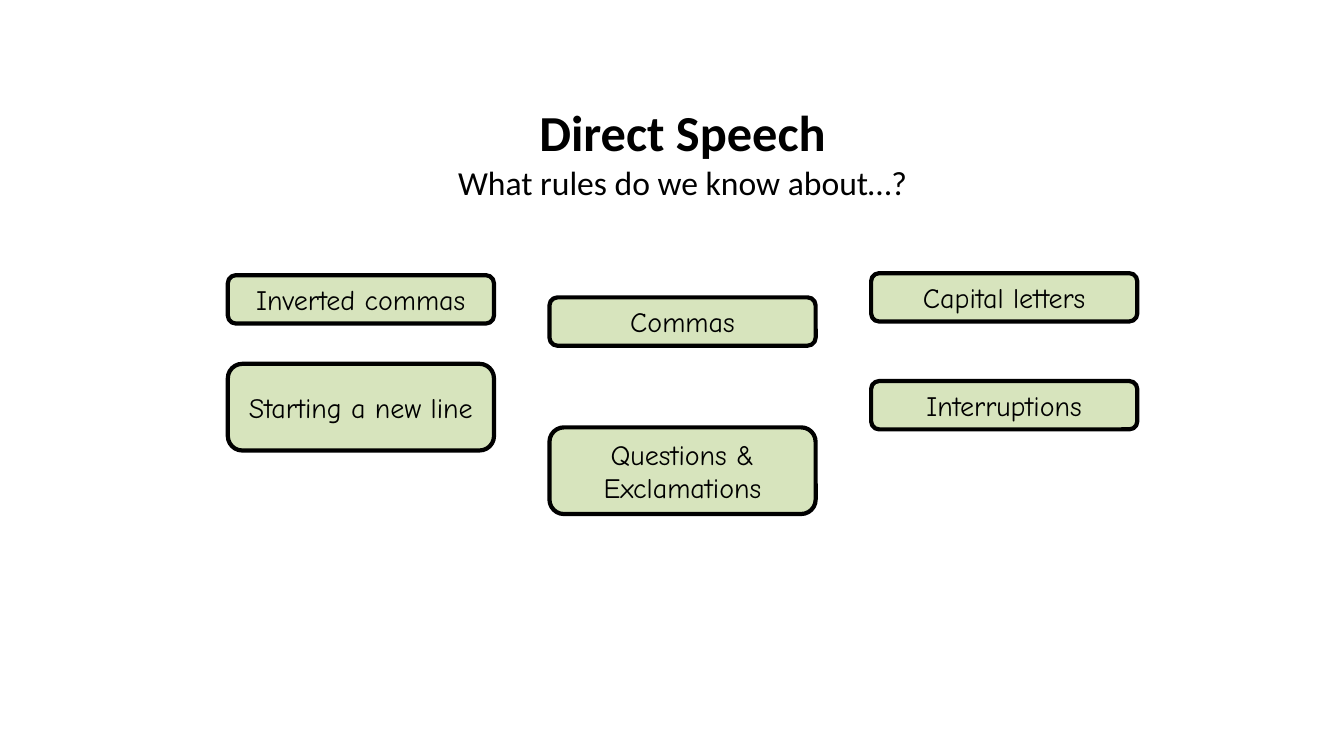
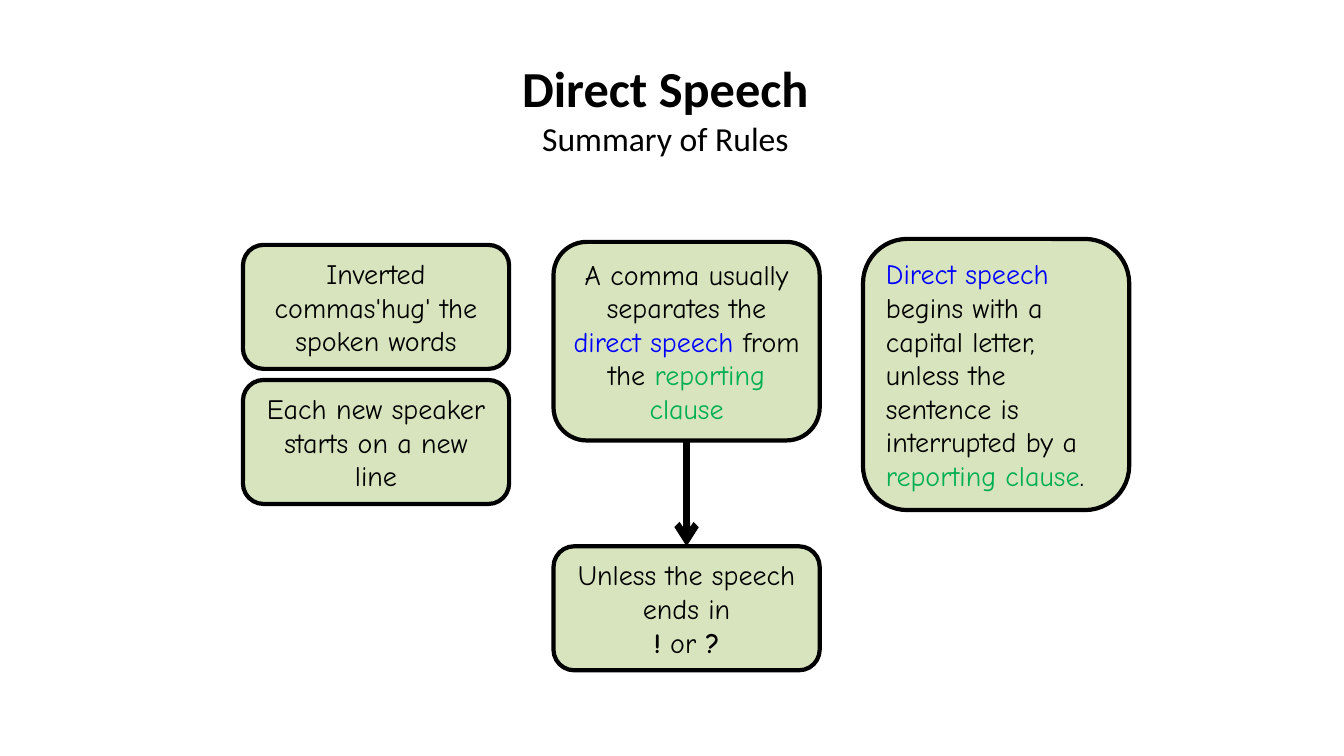
"""Build two slides on the rules of direct speech."""
from dataclasses import dataclass

from lxml import etree
from pptx import Presentation
from pptx import util as u
from pptx.dml.color import RGBColor
from pptx.enum import shapes, text
from pptx.oxml import ns

PX = 9144
BLACK, GREEN_FILL = "000000", "D7E4BD"
SPEECH, CLAUSE = "0000FF", "00B050"
TITLE_FONT, BOX_FONT = "Calibri", "Comic Neue"
BOX_W, TITLE_H = 264, 125
CENTER, LEFT = text.PP_ALIGN.CENTER, text.PP_ALIGN.LEFT


@dataclass(frozen=True)
class Run:
    text: str
    color: str = BLACK
    bold: bool = False


@dataclass(frozen=True)
class Box:
    x: int
    y: int
    h: int
    paragraphs: tuple[tuple[Run, ...], ...]
    align: text.PP_ALIGN = CENTER


def px(n: int) -> u.Emu:
    return u.Emu(n * PX)


def rgb(value: str) -> RGBColor:
    return RGBColor.from_string(value)


def add_text(p, content: str, *, size: int, font: str, color: str = BLACK, bold: bool = False):
    r = p.add_run()
    r.text = content
    r.font.size, r.font.name, r.font.bold = u.Pt(size), font, bold
    r.font.color.rgb = rgb(color)


def add_slide(prs, subtitle: str, x: int, y: int, w: int):
    s = prs.slides.add_slide(prs.slide_layouts[5])
    title = s.shapes.title
    title.left, title.top, title.width, title.height = px(x), px(y), px(w), px(TITLE_H)
    tf = title.text_frame
    tf.auto_size = text.MSO_AUTO_SIZE.NONE
    tf.vertical_anchor = text.MSO_ANCHOR.MIDDLE
    p = tf.paragraphs[0]
    p.alignment = CENTER
    add_text(p, "Direct Speech", size=36, font=TITLE_FONT, bold=True)
    p.add_line_break()
    add_text(p, subtitle, size=24, font=TITLE_FONT)
    return s


def add_box(s, box: Box):
    sp = s.shapes.add_shape(shapes.MSO_SHAPE.ROUNDED_RECTANGLE,
                            px(box.x), px(box.y), px(BOX_W), px(box.h))
    sp.shadow.inherit = False
    sp.fill.solid()
    sp.fill.fore_color.rgb = rgb(GREEN_FILL)
    sp.line.color.rgb = rgb(BLACK)
    sp.line.width = u.Pt(3)
    tf = sp.text_frame
    tf.word_wrap = True
    tf.auto_size = text.MSO_AUTO_SIZE.SHAPE_TO_FIT_TEXT
    tf.vertical_anchor = text.MSO_ANCHOR.MIDDLE
    for i, runs in enumerate(box.paragraphs):
        p = tf.add_paragraph() if i else tf.paragraphs[0]
        p.alignment = box.align
        for run in runs:
            add_text(p, run.text, size=20, font=BOX_FONT, color=run.color, bold=run.bold)
    return sp


def add_arrow(s, upper, lower):
    c = s.shapes.add_connector(shapes.MSO_CONNECTOR.STRAIGHT, 0, 0, 0, 0)
    c.begin_connect(upper, 2)
    c.end_connect(lower, 0)
    c.line.color.rgb = rgb(BLACK)
    c.line.width = u.Pt(5)
    etree.SubElement(c.line._get_or_add_ln(), ns.qn("a:tailEnd"), type="arrow")
    etree.SubElement(c._element.spPr, ns.qn("a:effectLst"))


def plain(x: int, y: int, h: int, content: str) -> Box:
    return Box(x, y, h, ((Run(content),),))


TOPICS = (
    plain(226, 273, 48, "Inverted commas"),
    plain(226, 361, 86, "Starting a new line"),
    plain(545, 295, 48, "Commas"),
    plain(545, 424, 86, "Questions & Exclamations"),
    plain(864, 271, 48, "Capital letters"),
    plain(864, 378, 48, "Interruptions"),
)
RULES = (
    plain(241, 243, 123, "Inverted commas'hug' the spoken words"),
    plain(241, 377, 123, "Each new speaker starts on a new line"),
    Box(856, 237, 269, ((
        Run("Direct speech ", SPEECH),
        Run("begins with a capital letter, unless the sentence is interrupted by a "),
        Run("reporting clause", CLAUSE), Run("."),
    ),), LEFT),
)
COMMA_RULE = Box(549, 240, 197, ((
    Run("A comma usually separates the "), Run("direct speech ", SPEECH),
    Run("from the "), Run("reporting clause", CLAUSE),
),))
COMMA_EXCEPTION = Box(549, 542, 123, (
    (Run("Unless the speech ends in"),),
    (Run("!", bold=True), Run(" or "), Run("?", bold=True)),
))


def main():
    prs = Presentation()
    prs.slide_width, prs.slide_height = px(1333), px(750)

    s = add_slide(prs, "What rules do we know about…?", 227, 88, 900)
    for box in TOPICS:
        add_box(s, box)

    s = add_slide(prs, "Summary of Rules", 60, 44, 1200)
    for box in RULES:
        add_box(s, box)
    add_arrow(s, add_box(s, COMMA_RULE), add_box(s, COMMA_EXCEPTION))

    prs.save("out.pptx")


if __name__ == "__main__":
    main()
